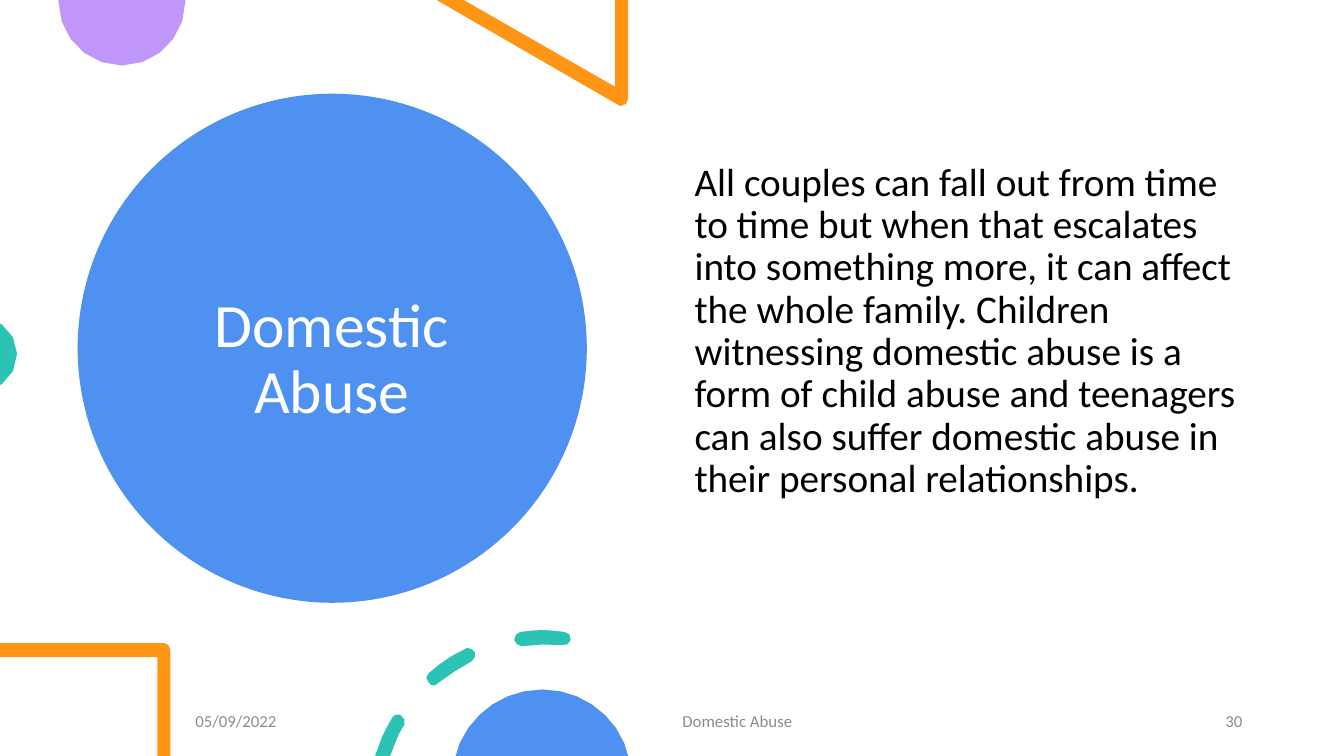
import math

from pptx import Presentation
from pptx.dml.color import RGBColor
from pptx.enum import shapes, text
from pptx.util import Inches, Pt

BLUE, PURPLE, ORANGE, TEAL = "4E91F0", "C097F8", "FF9514", "2CC3B4"
GREY, WHITE, BLACK = "8C8C8C", "FFFFFF", "000000"

presentation = Presentation()
presentation.slide_width = Inches(13.33)
presentation.slide_height = Inches(7.5)
slide = presentation.slides.add_slide(presentation.slide_layouts[6])


def paint(shape, color):
    shape.shadow.inherit = False
    shape.fill.solid()
    shape.fill.fore_color.rgb = RGBColor.from_string(color)
    shape.line.fill.background()


def add_outline(color, contours):
    builder = None
    for start, *segments in contours:
        points = [start]
        for segment in segments:
            if len(segment) == 2:
                points.append(segment)
                continue
            x0, y0 = points[-1]
            x1, y1, x2, y2, x3, y3 = segment
            steps = max(2, round(6 * math.hypot(x3 - x0, y3 - y0)))
            for step in range(1, steps + 1):
                t = step / steps
                a, b, c, d = (1 - t) ** 3, 3 * t * (1 - t) ** 2, 3 * t * t * (1 - t), t ** 3
                points.append((a * x0 + b * x1 + c * x2 + d * x3,
                               a * y0 + b * y1 + c * y2 + d * y3))
        corners = [(Inches(x), Inches(y)) for x, y in points]
        if builder is None:
            builder = slide.shapes.build_freeform(*corners[0], scale=1.0)
        else:
            builder.move_to(*corners[0])
        builder.add_line_segments(corners[1:], close=True)
    paint(builder.convert_to_shape(), color)


for preset, box, color in [
    (shapes.MSO_SHAPE.RECTANGLE, (0, 0, 13.33, 7.5), WHITE),
    (shapes.MSO_SHAPE.OVAL, (0.77, 0.93, 5.05, 5.05), BLUE),
]:
    paint(slide.shapes.add_shape(preset, *map(Inches, box)), color)

purple_circle = [(1.84, 0), (0.58, 0), (0.58, 0.01),
                 (0.58, 0.36, 0.86, 0.65, 1.21, 0.65),
                 (1.56, 0.65, 1.84, 0.36, 1.84, 0.01)]
orange_triangle = [(6.23, 0), (6.1, 0), (6.1, 0.86), (4.6, 0), (4.33, 0), (6.13, 1.04),
                   (6.14, 1.05, 6.15, 1.05, 6.16, 1.05),
                   (6.2, 1.05, 6.23, 1.02, 6.23, 0.98)]
teal_circle = [(0, 3.21), (0, 3.82), (0.02, 3.81),
               (0.11, 3.74, 0.17, 3.64, 0.17, 3.51),
               (0.17, 3.39, 0.11, 3.29, 0.02, 3.22)]
orange_square = [(1.63, 6.38), (0, 6.38), (0, 6.52), (1.56, 6.52), (1.56, 7.5),
                 (1.69, 7.5), (1.69, 6.45), (1.69, 6.41, 1.66, 6.38, 1.63, 6.38)]
left_dash = [(3.95, 7.09), (3.93, 7.08, 3.9, 7.1, 3.89, 7.12),
             (3.85, 7.18, 3.82, 7.25, 3.79, 7.31), (3.72, 7.5), (3.87, 7.5), (3.92, 7.37),
             (3.94, 7.31, 3.97, 7.25, 4.01, 7.19), (4.02, 7.16, 4.01, 7.11, 3.98, 7.1),
             (3.97, 7.09, 3.96, 7.09, 3.95, 7.09)]
middle_dash = [(4.64, 6.43), (4.63, 6.43, 4.62, 6.43, 4.61, 6.44),
               (4.48, 6.5, 4.36, 6.58, 4.25, 6.68), (4.22, 6.7, 4.22, 6.75, 4.25, 6.77),
               (4.26, 6.79, 4.28, 6.8, 4.3, 6.8), (4.32, 6.8, 4.33, 6.79, 4.34, 6.78),
               (4.45, 6.7, 4.56, 6.62, 4.68, 6.56), (4.71, 6.54, 4.72, 6.5, 4.71, 6.47),
               (4.69, 6.44, 4.67, 6.43, 4.64, 6.43)]
right_dash = [(5.38, 6.25), (5.31, 6.25, 5.24, 6.26, 5.16, 6.27),
              (5.13, 6.27, 5.1, 6.31, 5.1, 6.35), (5.11, 6.38, 5.14, 6.41, 5.17, 6.41),
              (5.18, 6.41), (5.32, 6.39, 5.45, 6.39, 5.58, 6.4),
              (5.62, 6.41, 5.65, 6.38, 5.66, 6.35), (5.67, 6.31, 5.64, 6.27, 5.6, 6.27),
              (5.53, 6.26, 5.45, 6.25, 5.38, 6.25)]
blue_circle = [(5.38, 6.84), (5.01, 6.84, 4.7, 7.06, 4.56, 7.37), (4.52, 7.5),
               (6.23, 7.5), (6.19, 7.37), (6.06, 7.06, 5.74, 6.84, 5.38, 6.84)]

for color, contours in [
    (PURPLE, [purple_circle]),
    (ORANGE, [orange_triangle]),
    (TEAL, [teal_circle]),
    (ORANGE, [orange_square]),
    (TEAL, [left_dash, middle_dash, right_dash]),
    (BLUE, [blue_circle]),
]:
    add_outline(color, contours)

body = ("All couples can fall out from time to time but when that escalates into something "
        "more, it can affect the whole family. Children witnessing domestic abuse is a form "
        "of child abuse and teenagers can also suffer domestic abuse in their personal "
        "relationships.")
LEFT, CENTER, RIGHT = text.PP_ALIGN.LEFT, text.PP_ALIGN.CENTER, text.PP_ALIGN.RIGHT
TOP, MIDDLE = text.MSO_ANCHOR.TOP, text.MSO_ANCHOR.MIDDLE

for words, box, size, color, alignment, anchor, line_spacing, before, after in [
    ("Domestic Abuse", (1.52, 1.35, 3.54, 4.45), 44, WHITE, CENTER, MIDDLE, 0.9, 0, 0),
    (body, (6.79, 1.56, 5.75, 5.35), 28, BLACK, LEFT, TOP, 0.9, 10, 0),
    ("05/09/2022", (1.84, 6.95, 1.69, 0.4), 12, GREY, LEFT, MIDDLE, 1.0, 0, 6),
    ("Domestic Abuse", (6.67, 6.95, 4.71, 0.4), 12, GREY, LEFT, MIDDLE, 1.0, 0, 6),
    ("30", (11.49, 6.95, 0.93, 0.4), 12, GREY, RIGHT, MIDDLE, 1.0, 0, 6),
]:
    frame = slide.shapes.add_textbox(*map(Inches, box)).text_frame
    frame.word_wrap = True
    frame.vertical_anchor = anchor
    paragraph = frame.paragraphs[0]
    paragraph.text = words
    paragraph.alignment = alignment
    paragraph.line_spacing = line_spacing
    paragraph.space_before = Pt(before)
    paragraph.space_after = Pt(after)
    paragraph.font.name = "Calibri"
    paragraph.font.size = Pt(size)
    paragraph.font.color.rgb = RGBColor.from_string(color)

presentation.save("out.pptx")
